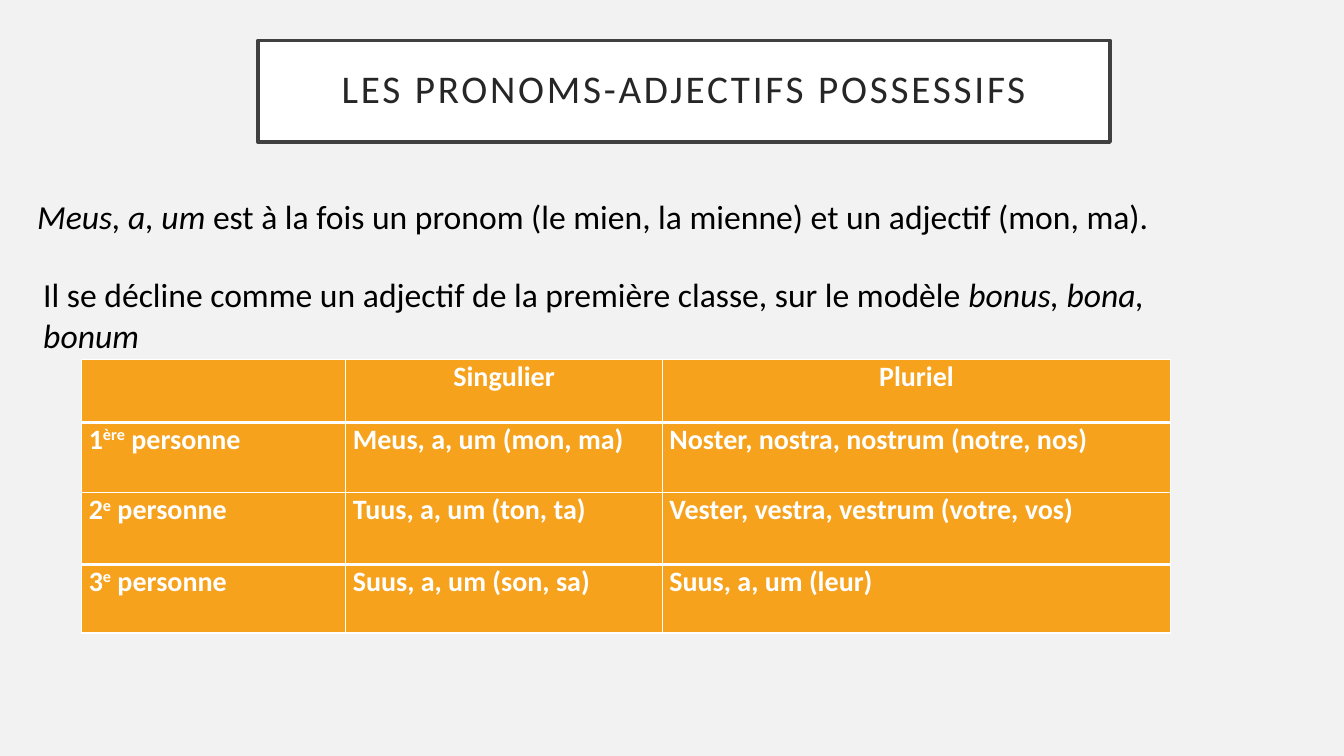
import pptx
import pptx.util
import pptx.dml.color
import pptx.enum.text
from lxml import etree
import pptx.oxml.ns

COLORS = {"background": "F2F2F2", "title": "262626", "frame": "404040",
          "white": "FFFFFF", "black": "000000", "cell": "F6A21D"}
ALIGN = pptx.enum.text.PP_ALIGN
ANCHOR = pptx.enum.text.MSO_ANCHOR


def rgb(name):
    return pptx.dml.color.RGBColor.from_string(COLORS[name])


class Deck:
    font = "Calibri"

    def __init__(self, width, height):
        self.prs = pptx.Presentation()
        self.prs.slide_width = pptx.util.Inches(width)
        self.prs.slide_height = pptx.util.Inches(height)
        self.s = self.prs.slides.add_slide(self.prs.slide_layouts[5])
        fill = self.s.background.fill
        fill.solid()
        fill.fore_color.rgb = rgb("background")

    def x(self, percent):
        return round(self.prs.slide_width * percent / 100)

    def y(self, percent):
        return round(self.prs.slide_height * percent / 100)

    def box(self, left, top, width, height):
        return self.x(left), self.y(top), self.x(width), self.y(height)

    def paragraph(self, p, runs, size, color, bold=False, align=ALIGN.LEFT):
        p.alignment = align
        p.font.name = self.font
        p.font.size = pptx.util.Pt(size)
        p.font.bold = bold
        p.font.color.rgb = rgb(color)
        for text, style in runs:
            r = p.add_run()
            r.text = text
            if style == "italic":
                r.font.italic = True
            elif style == "superscript":
                r._r.get_or_add_rPr().set("baseline", "30000")

    def title(self, text, *place):
        sp = self.s.shapes.title
        sp.left, sp.top, sp.width, sp.height = self.box(*place)
        sp.fill.solid()
        sp.fill.fore_color.rgb = rgb("white")
        sp.line.color.rgb = rgb("frame")
        sp.line.width = pptx.util.Pt(2.5)
        tf = sp.text_frame
        tf.word_wrap = True
        tf.auto_size = pptx.enum.text.MSO_AUTO_SIZE.NONE
        tf.vertical_anchor = ANCHOR.MIDDLE
        inset = pptx.util.Inches(0.2)
        tf.margin_left = tf.margin_right = tf.margin_top = tf.margin_bottom = inset
        p = tf.paragraphs[0]
        p.line_spacing = 0.9
        self.paragraph(p, [(text, None)], 28, "title", align=ALIGN.CENTER)
        p.runs[0]._r.get_or_add_rPr().set("spc", "200")

    def text(self, runs, *place, anchor=ANCHOR.TOP):
        tf = self.s.shapes.add_textbox(*self.box(*place)).text_frame
        tf.word_wrap = True
        tf.vertical_anchor = anchor
        self.paragraph(tf.paragraphs[0], runs, 24, "black")

    def borders(self, cell, **widths):
        tcPr = cell._tc.get_or_add_tcPr()
        for side in "LRTB":
            width = pptx.util.Pt(widths.get(side, 1))
            ln = etree.SubElement(tcPr, pptx.oxml.ns.qn("a:ln" + side), w=str(width))
            fill = etree.SubElement(ln, pptx.oxml.ns.qn("a:solidFill"))
            etree.SubElement(fill, pptx.oxml.ns.qn("a:srgbClr"), val=COLORS["white"])

    def table(self, rows, left, top, widths, heights, thick_below):
        place = self.box(left, top, sum(widths), sum(heights))
        table = self.s.shapes.add_table(len(rows), len(widths), *place).table
        table.first_row = table.horz_banding = False
        for column, width in zip(table.columns, widths):
            column.width = self.x(width)
        for i, (row, height) in enumerate(zip(rows, heights)):
            table.rows[i].height = self.y(height)
            for j, runs in enumerate(row):
                cell = table.cell(i, j)
                self.borders(cell, T=3 if i - 1 in thick_below else 1,
                             B=3 if i in thick_below else 1)
                cell.fill.solid()
                cell.fill.fore_color.rgb = rgb("cell")
                cell.margin_left = cell.margin_right = pptx.util.Inches(0.07)
                cell.margin_top = cell.margin_bottom = 0
                self.paragraph(cell.text_frame.paragraphs[0], runs, 20, "white",
                               bold=True, align=ALIGN.LEFT if i else ALIGN.CENTER)


def main():
    deck = Deck(13.33, 7.5)
    deck.title("LES PRONOMS-ADJECTIFS POSSESSIFS", 19.2, 5.33, 63.39, 13.47)
    persons = [
        ("1", "ère", "Meus, a, um (mon, ma)", "Noster, nostra, nostrum (notre, nos)"),
        ("2", "e", "Tuus, a, um (ton, ta)", "Vester, vestra, vestrum (votre, vos)"),
        ("3", "e", "Suus, a, um (son, sa)", "Suus, a, um (leur)"),
    ]
    rows = [[[], [("Singulier", None)], [("Pluriel", None)]]]
    for number, ending, singular, plural in persons:
        person = [(number, None), (ending, "superscript"), (" personne", None)]
        rows.append([person, [(singular, None)], [(plural, None)]])
    deck.table(rows, 6.08, 47.6, [19.65, 23.56, 37.81],
               [8.27, 9.33, 9.47, 9.07], thick_below=(0, 2))
    deck.text([("Meus, a, um ", "italic"),
               ("est à la fois un pronom (le mien, la mienne) et un adjectif (mon, ma).", None)],
              2.03, 25.2, 90.85, 6.67, anchor=ANCHOR.MIDDLE)
    deck.text([("Il se décline comme un adjectif de la première classe, sur le modèle ", None),
               ("bonus, bona, bonum", "italic")], 2.48, 35.6, 89.87, 12.13)
    deck.prs.save("out.pptx")


if __name__ == "__main__":
    main()
